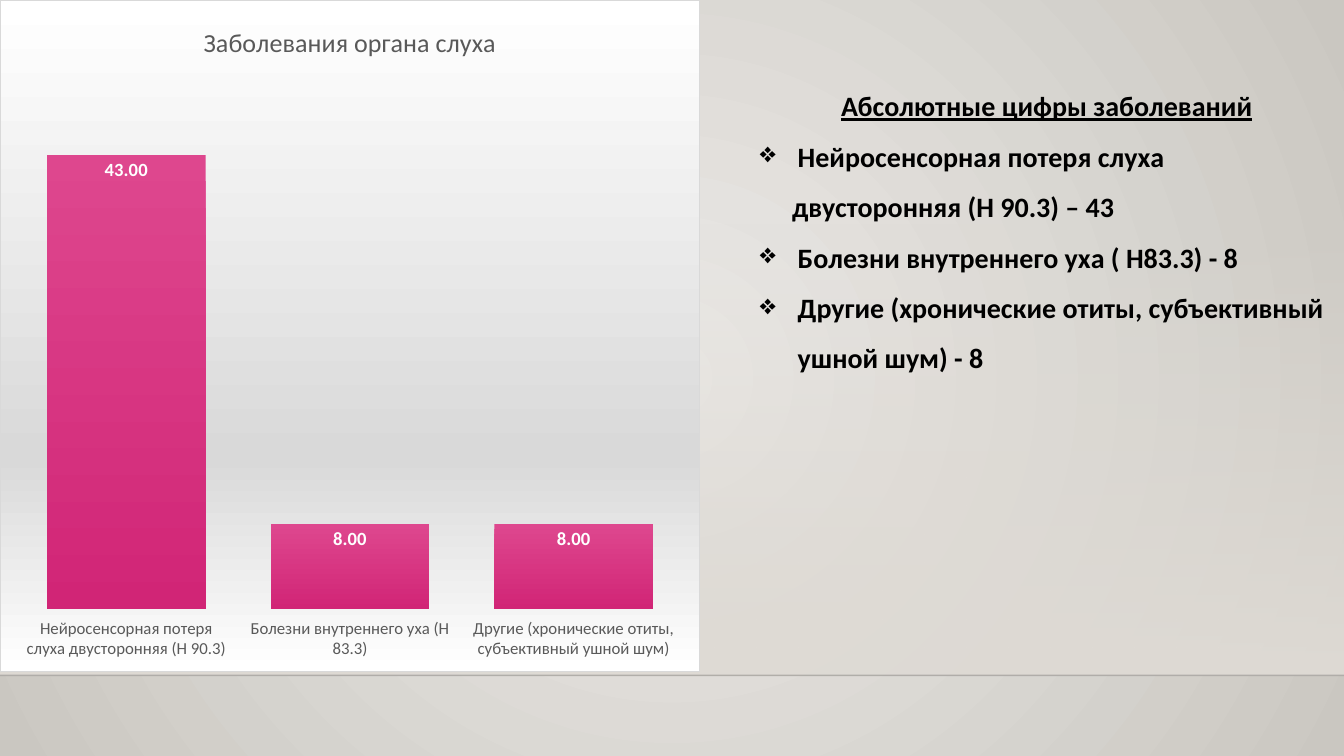
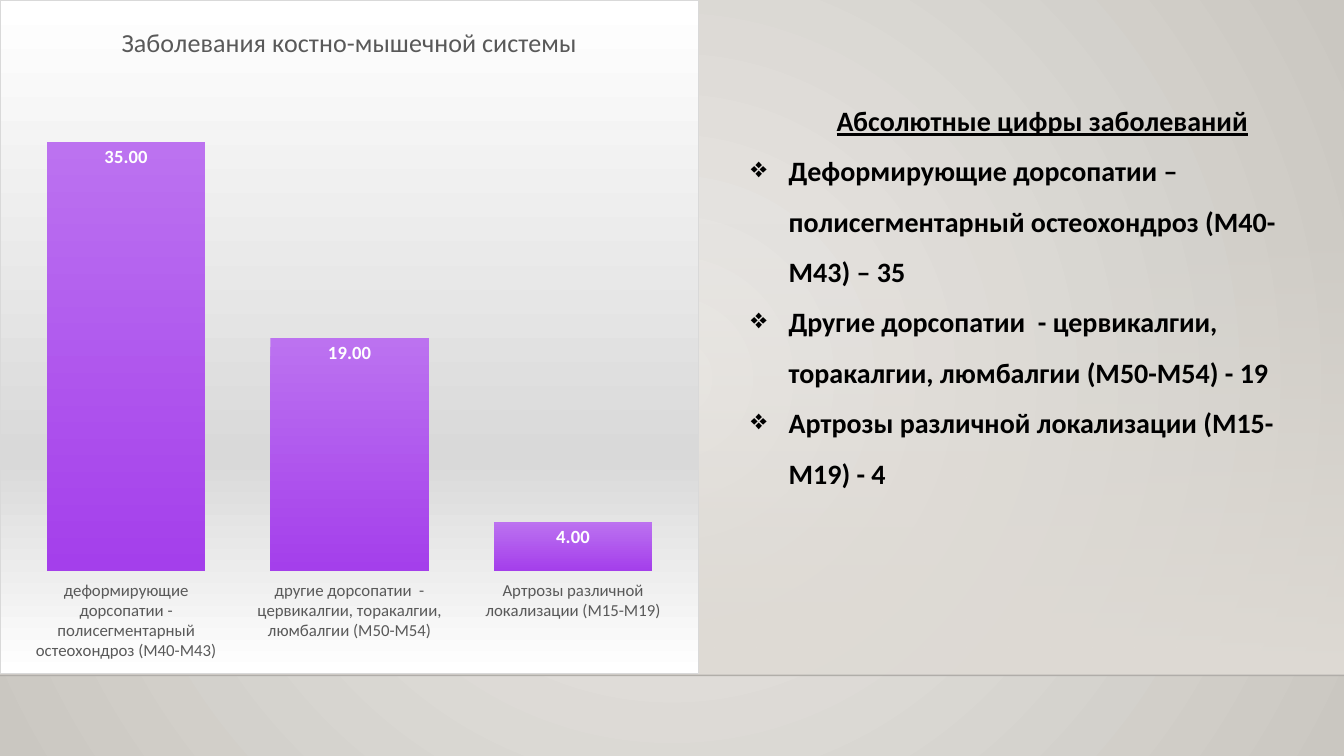
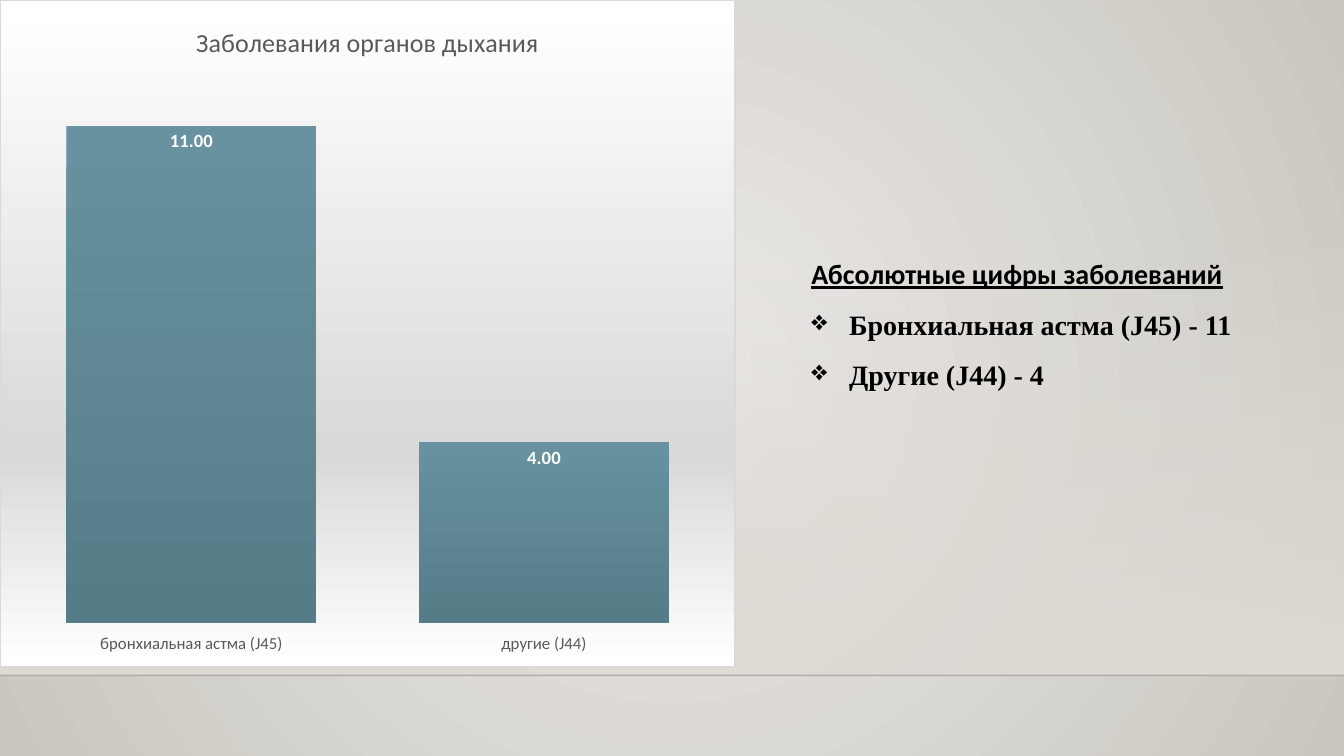
from lxml import etree
from pptx import Presentation
from pptx.chart.data import CategoryChartData
from pptx.dml.color import RGBColor
from pptx.enum.chart import XL_CHART_TYPE, XL_LABEL_POSITION, XL_TICK_LABEL_POSITION, XL_TICK_MARK
from pptx.enum.shapes import MSO_CONNECTOR, MSO_SHAPE
from pptx.enum.text import MSO_AUTO_SIZE, PP_ALIGN
from pptx.oxml.ns import nsdecls, qn
from pptx.oxml import parse_xml
from pptx.util import Pt

COLUMNS = XL_CHART_TYPE.COLUMN_CLUSTERED
INSIDE_END = XL_LABEL_POSITION.INSIDE_END
NO_TICKS = XL_TICK_MARK.NONE
LABELS_LOW = XL_TICK_LABEL_POSITION.LOW
CENTER, LEFT = PP_ALIGN.CENTER, PP_ALIGN.LEFT
GROW = MSO_AUTO_SIZE.SHAPE_TO_FIT_TEXT

WIDTH, HEIGHT = 960, 540
BAND_TOP, FLOOR = 159, 482.4
INDENT = 27
VALUE_FORMAT = "0.00"
HEADING = "Абсолютные цифры заболеваний"

# Gradient stops: position in percent, colour, opacity in percent
BACKDROP = [(0, "ECEAE7", 100), (100, "CAC7C1", 100)]
BAND = [(0, "DFDBD5", 0), (100, "DFDBD5", 100)]
CHART_PANEL = [(0, "FFFFFF", 100), (68, "D9D9D9", 100), (100, "FFFFFF", 100)]
FROM_CENTER = ('<a:path path="circle"><a:fillToRect l="50000" t="50000" '
               'r="50000" b="50000"/></a:path>')
DOWNWARD = '<a:lin ang="5400000" scaled="0"/>'

CHART_TITLE = {"name": "Calibri", "size": Pt(18.6), "bold": False, "color": "595959"}
CATEGORY = {"name": "Calibri", "size": Pt(12), "color": "595959"}
VALUE = {"name": "Calibri", "size": Pt(13.3), "bold": True, "color": "FFFFFF"}
BODY = {"name": "Calibri", "size": Pt(20), "bold": True, "color": "000000"}

# Findings: (text, has a bullet)
SLIDES = [
    {
        "title": "Заболевания органа слуха",
        "chart_size": (500, 480.2),
        "bars": [("Нейросенсорная потеря слуха двусторонняя (Н 90.3)", 43),
                 ("Болезни внутреннего уха (Н 83.3)", 8),
                 ("Другие (хронические отиты, субъективный ушной шум)", 8)],
        "axis_top": 50,
        "bar_colors": ("DE478E", "D12576"),
        "findings_box": (535.7, 48, 424.1, 248),
        "heading_align": CENTER,
        "findings_font": "Calibri",
        "findings": [("Нейросенсорная потеря слуха", True),
                     ("двусторонняя (Н 90.3) – 43", False),
                     ("Болезни внутреннего уха ( Н83.3) - 8", True),
                     ("Другие (хронические отиты, субъективный ушной шум) - 8", True)],
    },
    {
        "title": "Заболевания костно-мышечной системы",
        "chart_size": (499.5, 481.7),
        "bars": [("деформирующие дорсопатии - полисегментарный остеохондроз (M40-M43)", 35),
                 ("другие дорсопатии  - цервикалгии, торакалгии, люмбалгии (M50-M54)", 19),
                 ("Артрозы различной локализации (М15-М19)", 4)],
        "axis_top": 40,
        "bar_colors": ("BC72F0", "A43FEB"),
        "findings_box": (529.2, 58.3, 430.6, 344.2),
        "heading_align": CENTER,
        "findings_font": "Calibri",
        "findings": [("Деформирующие дорсопатии – полисегментарный остеохондроз (M40-M43) – 35", True),
                     ("Другие дорсопатии  - цервикалгии, торакалгии, люмбалгии (M50-M54) - 19", True),
                     ("Артрозы различной локализации (М15-М19) - 4", True)],
    },
    {
        "title": "Заболевания органов дыхания",
        "chart_size": (525.4, 476.6),
        "bars": [("бронхиальная астма (J45)", 11), ("другие (J44)", 4)],
        "axis_top": 12,
        "bar_colors": ("6892A0", "567C88"),
        "findings_box": (572.4, 167.8, 320, 112.3),
        "heading_align": LEFT,
        "findings_font": "Times New Roman",
        "findings": [("Бронхиальная астма (J45) - 11", True), ("Другие (J44) - 4", True)],
    },
]


def rgb(color):
    return RGBColor.from_string(color)


def style(font, **formats):
    for attribute, value in formats.items():
        if attribute == "color":
            font.color.rgb = rgb(value)
        else:
            setattr(font, attribute, value)


def gradient_xml(stops, direction):
    marks = "".join(
        f'<a:gs pos="{position * 1000}"><a:srgbClr val="{color}">'
        f'<a:alpha val="{opacity * 1000}"/></a:srgbClr></a:gs>'
        for position, color, opacity in stops)
    return (f'<a:gradFill {nsdecls("a")} rotWithShape="1"><a:gsLst>{marks}</a:gsLst>'
            f'{direction}</a:gradFill>')


def fill_gradient(fill, element, stops, direction=DOWNWARD):
    """Give the first fill inside element the gradient."""
    fill.solid()
    solid = element.find(".//" + qn("a:solidFill"))
    solid.getparent().replace(solid, parse_xml(gradient_xml(stops, direction)))


def decorate_layout(layout, slide):
    """Set the shared backdrop; band and floor line are drawn on slide, then moved to layout."""
    fill_gradient(layout.background.fill, layout.element, BACKDROP, FROM_CENTER)

    band = slide.shapes.add_shape(MSO_SHAPE.RECTANGLE, 0, Pt(BAND_TOP),
                                  Pt(WIDTH), Pt(FLOOR - BAND_TOP))
    band.shadow.inherit = False
    band.line.fill.background()
    fill_gradient(band.fill, band.element, BAND)

    floor = slide.shapes.add_connector(MSO_CONNECTOR.STRAIGHT, 0, Pt(FLOOR), Pt(WIDTH), Pt(FLOOR))
    floor.line.width = Pt(1)
    floor.line.color.rgb = rgb("000001")
    line_color = floor.element.find(".//" + qn("a:srgbClr"))
    etree.SubElement(line_color, qn("a:alpha"), val="20000")
    etree.SubElement(floor.element.spPr, qn("a:effectLst"))

    for part in (band, floor):
        layout.shapes.element.append(part.element)


def add_disease_chart(slide, content):
    categories, values = zip(*content["bars"])
    data = CategoryChartData(number_format=VALUE_FORMAT)
    data.categories = categories
    data.add_series(content["title"], values)
    width, height = content["chart_size"]
    chart = slide.shapes.add_chart(COLUMNS, 0, 0, Pt(width), Pt(height), data).chart

    style(chart.font, name="Calibri", size=Pt(10), color="000000")
    chart.has_legend = False
    chart.has_title = True
    heading = chart.chart_title.text_frame
    heading.text = content["title"]
    style(heading.paragraphs[0].runs[0].font, **CHART_TITLE)
    chart.chart_title.include_in_layout = False

    category_axis = chart.category_axis
    category_axis.major_tick_mark = category_axis.minor_tick_mark = NO_TICKS
    category_axis.tick_label_position = LABELS_LOW
    category_axis.format.line.fill.background()
    style(category_axis.tick_labels.font, **CATEGORY)

    value_axis = chart.value_axis
    value_axis.has_major_gridlines = False
    value_axis.minimum_scale, value_axis.maximum_scale = 0, content["axis_top"]
    value_axis.visible = False

    plot = chart.plots[0]
    plot.gap_width = 41
    plot.vary_by_categories = False
    series = plot.series[0]
    top, bottom = content["bar_colors"]
    fill_gradient(series.format.fill, series._element, [(0, top, 100), (100, bottom, 100)])
    labels = series.data_labels
    labels.show_value = True
    labels.position = INSIDE_END
    labels.number_format = VALUE_FORMAT
    labels.number_format_is_linked = False
    style(labels.font, **VALUE)

    panel = parse_xml(
        f'<c:spPr {nsdecls("c", "a")}>{gradient_xml(CHART_PANEL, DOWNWARD)}'
        '<a:ln w="9525"><a:solidFill><a:srgbClr val="D9D9D9"/></a:solidFill></a:ln></c:spPr>')
    chart._chartSpace.find(qn("c:chart")).addnext(panel)


def add_findings(slide, content):
    box = slide.shapes.add_textbox(*map(Pt, content["findings_box"]))
    frame = box.text_frame
    frame.word_wrap = True
    frame.auto_size = GROW

    heading = frame.paragraphs[0]
    heading.alignment = content["heading_align"]
    heading.line_spacing = 1.5
    run = heading.add_run()
    run.text = HEADING
    style(run.font, **BODY, underline=True)

    for text, has_bullet in content["findings"]:
        finding = frame.add_paragraph()
        finding.line_spacing = 1.5
        properties = finding._p.get_or_add_pPr()
        if has_bullet:
            properties.set("marL", str(Pt(INDENT)))
            properties.set("indent", str(-Pt(INDENT)))
            etree.SubElement(properties, qn("a:buChar"), char="❖")
        else:
            properties.set("marL", str(Pt(23)))
        run = finding.add_run()
        run.text = text
        style(run.font, **{**BODY, "name": content["findings_font"]})


def main():
    prs = Presentation()
    prs.slide_width, prs.slide_height = Pt(WIDTH), Pt(HEIGHT)
    blank = prs.slide_layouts[6]
    for number, content in enumerate(SLIDES):
        slide = prs.slides.add_slide(blank)
        if number == 0:
            decorate_layout(blank, slide)
        add_disease_chart(slide, content)
        add_findings(slide, content)
    prs.save("out.pptx")


if __name__ == "__main__":
    main()
